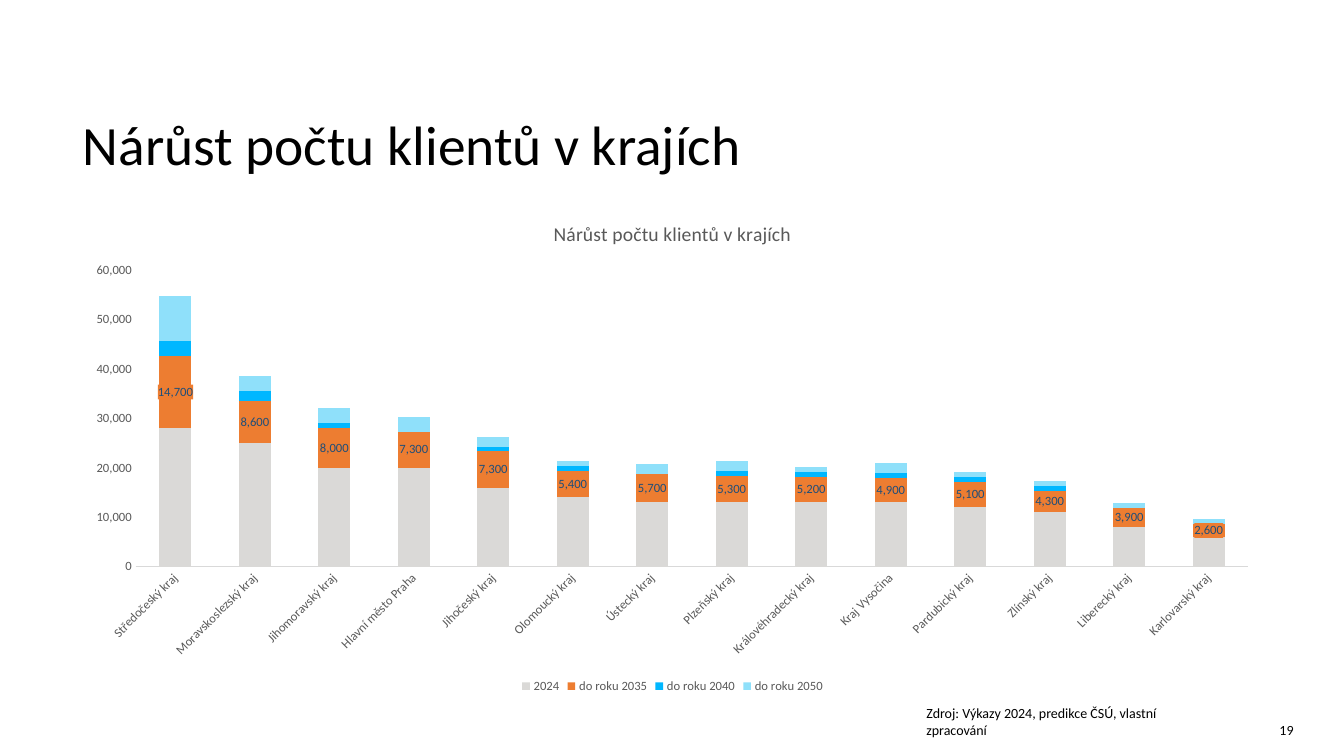
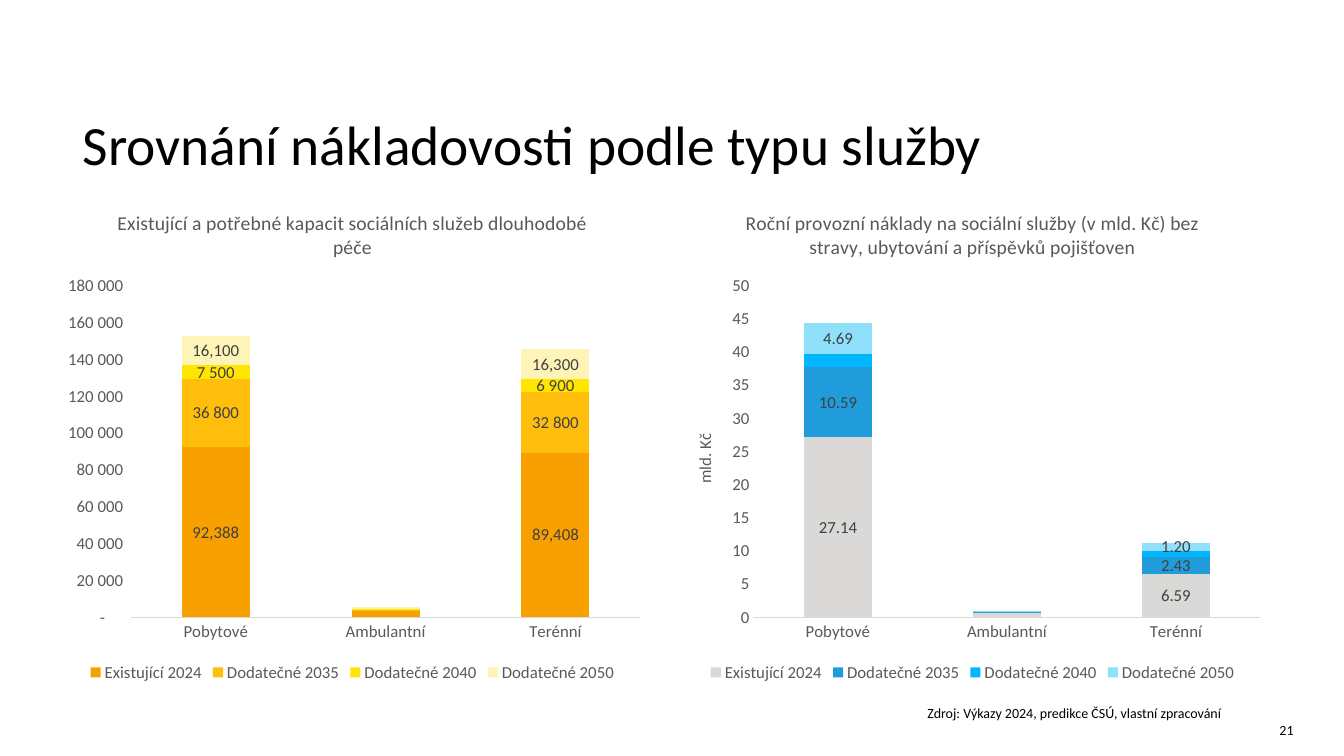
from lxml import etree
from pptx import Presentation
from pptx.chart.data import CategoryChartData
from pptx.dml.color import RGBColor
from pptx.enum.chart import (XL_CHART_TYPE as ChartType, XL_LABEL_POSITION as LabelPos,
                             XL_LEGEND_POSITION as LegendPos, XL_TICK_MARK as Tick)
from pptx.enum.text import MSO_ANCHOR as Anchor, MSO_AUTO_SIZE as AutoSize, PP_ALIGN as Align
from pptx.oxml import parse_xml
from pptx.oxml.ns import nsdecls, qn
from pptx.util import Inches, Pt

FONT = "Calibri"
BLACK, GREY, DARK, LINE = "000000", "595959", "404040", "D9D9D9"
SILVER, ORANGE, BLUE, SKY, ICE = "DAD9D7", "ED7D31", "219CDB", "00B7FF", "8FE0FA"
THOUSANDS, DECIMALS = "#,##0", "0.00"
SPACED = r'_-* #\ ##0_-;\-* #\ ##0_-;_-* "-"??_-;_-'
SOURCE = "Zdroj: Výkazy 2024, predikce ČSÚ, vlastní zpracování"

REGIONS = ["Středočeský kraj", "Moravskoslezský kraj", "Jihomoravský kraj",
           "Hlavní město Praha", "Jihočeský kraj", "Olomoucký kraj", "Ústecký kraj",
           "Plzeňský kraj", "Královéhradecký kraj", "Kraj Vysočina", "Pardubický kraj",
           "Zlínský kraj", "Liberecký kraj", "Karlovarský kraj"]
SERVICES = ["Pobytové", "Ambulantní", "Terénní"]

# Series: name, colour, label format (None = no labels), values
REGION_CHART = dict(
    title="Nárůst počtu klientů v krajích", at=(0.72, 2, 11.9, 4.92), size=9,
    cats=REGIONS, axis_format=THOUSANDS, top=60000, step=10000, cat_angle=-45,
    label_color="1F4E79", label_fill=ORANGE,
    series=[
        ("2024", SILVER, None, [28000, 25000, 20000, 20000, 16000, 14000, 13000,
                                13000, 13000, 13000, 12000, 11000, 8000, 6000]),
        ("do roku 2035", ORANGE, THOUSANDS, [14700, 8600, 8000, 7300, 7300, 5400, 5700,
                                             5300, 5200, 4900, 5100, 4300, 3900, 2600]),
        ("do roku 2040", SKY, None, [3000, 2000, 1000, 0, 1000, 1000, 0,
                                     1000, 1000, 1000, 1000, 1000, 0, 0]),
        ("do roku 2050", ICE, None, [9000, 3000, 3000, 3000, 2000, 1000, 2000,
                                     2000, 1000, 2000, 1000, 1000, 1000, 1000]),
    ])
CAPACITY_CHART = dict(
    title="Existující a potřebné kapacit sociálních služeb dlouhodobé péče",
    at=(0.52, 1.89, 5.95, 4.92), size=12, cats=SERVICES,
    axis_format=SPACED, top=180000, step=20000, unlabelled=1,
    series=[
        ("Existující 2024", "F7A000", THOUSANDS, [92388, 3341, 89408]),
        ("Dodatečné 2035", "FFBE0B", SPACED, [36800, 1100, 32800]),
        ("Dodatečné 2040", "FFE500", SPACED, [7500, 300, 6900]),
        ("Dodatečné 2050", "FFF4B7", THOUSANDS, [16100, 600, 16300]),
    ])
COST_CHART = dict(
    title="Roční provozní náklady na sociální služby (v mld. Kč) bez stravy, "
          "ubytování a příspěvků pojišťoven",
    at=(6.67, 1.89, 5.95, 4.92), size=12, cats=SERVICES,
    axis_format="0", top=50, step=5, unlabelled=1, axis_title="mld. Kč",
    series=[
        ("Existující 2024", SILVER, DECIMALS, [27.14, 0.67, 6.59]),
        ("Dodatečné 2035", BLUE, DECIMALS, [10.59, 0.22, 2.43]),
        ("Dodatečné 2040", SKY, None, [2, 0, 1]),
        ("Dodatečné 2050", ICE, DECIMALS, [4.69, 0.12, 1.2]),
    ])
SLIDES = [
    dict(title="Nárůst počtu klientů v krajích", number="19",
         source_at=(9.09, 6.94, 3.1, 0.44), charts=[REGION_CHART]),
    dict(title="Srovnání nákladovosti podle typu služby", number="21",
         source_at=(9.1, 6.94, 3.67, 0.27), charts=[CAPACITY_CHART, COST_CHART]),
]


def rgb(color):
    return RGBColor.from_string(color)


def box(at):
    return [Inches(v) for v in at]


def set_font(font, size, color):
    font.name, font.size, font.bold = FONT, Pt(size), False
    font.color.rgb = rgb(color)


def add_text(s, text, at, align=Align.LEFT, anchor=Anchor.TOP):
    tf = s.shapes.add_textbox(*box(at)).text_frame
    tf.word_wrap, tf.vertical_anchor = True, anchor
    p = tf.paragraphs[0]
    p.text, p.alignment = text, align
    set_font(p.font, 10, BLACK)


def set_title(s, text):
    sp = s.shapes.title
    sp.left, sp.top, sp.width, sp.height = box((0.72, 1.18, 10.33, 0.57))
    tf = sp.text_frame
    tf.auto_size, tf.vertical_anchor = AutoSize.NONE, Anchor.MIDDLE
    p = tf.paragraphs[0]
    p.text, p.alignment, p.line_spacing = text, Align.LEFT, 0.9
    set_font(p.font, 39.6, BLACK)


def set_chart_text(tf, text, size):
    p = tf.paragraphs[0]
    p.text = text
    set_font(p.font, size, GREY)


def add_labels(series, number_format, spec_chart):
    labels = series.data_labels
    labels.show_value, labels.position = True, LabelPos.CENTER
    labels.number_format, labels.number_format_is_linked = number_format, False
    set_font(labels.font, spec_chart["size"], spec_chart.get("label_color", DARK))
    xml = labels._element
    if "label_fill" in spec_chart:
        fill = parse_xml(f'<c:spPr {nsdecls("c", "a")}><a:solidFill><a:srgbClr '
                         f'val="{spec_chart["label_fill"]}"/></a:solidFill></c:spPr>')
        xml.find(qn("c:txPr")).addprevious(fill)
    if "unlabelled" in spec_chart:
        hidden = etree.Element(qn("c:dLbl"))
        etree.SubElement(hidden, qn("c:idx")).set("val", str(spec_chart["unlabelled"]))
        etree.SubElement(hidden, qn("c:delete")).set("val", "1")
        xml.insert(0, hidden)


def format_axes(chart, info):
    cat, val = chart.category_axis, chart.value_axis
    for axis in (cat, val):
        axis.has_major_gridlines = False
        axis.major_tick_mark = axis.minor_tick_mark = Tick.NONE
        set_font(axis.tick_labels.font, info["size"], GREY)
    cat.format.line.color.rgb, cat.format.line.width = rgb(LINE), Pt(0.75)
    if "cat_angle" in info:
        body = cat._element.find(qn("c:txPr")).find(qn("a:bodyPr"))
        body.set("rot", str(info["cat_angle"] * 60000))
    val.format.line.fill.background()
    val.minimum_scale, val.maximum_scale, val.major_unit = 0, info["top"], info["step"]
    val.tick_labels.number_format = info["axis_format"]
    val.tick_labels.number_format_is_linked = False
    if "axis_title" in info:
        tf = val.axis_title.text_frame
        set_chart_text(tf, info["axis_title"], info["size"])
        tf._txBody.find(qn("a:bodyPr")).set("rot", "-5400000")


def add_stacked_chart(s, info):
    data = CategoryChartData()
    data.categories = info["cats"]
    for name, _, _, values in info["series"]:
        data.add_series(name, values)
    chart = s.shapes.add_chart(ChartType.COLUMN_STACKED, *box(info["at"]), data).chart
    set_font(chart.font, info["size"], GREY)
    chart.has_title = True
    set_chart_text(chart.chart_title.text_frame, info["title"], 14)
    chart.has_legend = True
    chart.legend.position, chart.legend.include_in_layout = LegendPos.BOTTOM, False
    set_font(chart.legend.font, info["size"], GREY)
    format_axes(chart, info)

    plot = chart.plots[0]
    plot.gap_width, plot.overlap, plot.vary_by_categories = 150, 100, False
    for series, (_, color, number_format, _) in zip(plot.series, info["series"]):
        series.format.fill.solid()
        series.format.fill.fore_color.rgb = rgb(color)
        if number_format:
            add_labels(series, number_format, info)


def main():
    prs = Presentation()
    prs.slide_width, prs.slide_height = Inches(13.33), Inches(7.5)
    title_only = prs.slide_layouts[5]
    for content in SLIDES:
        s = prs.slides.add_slide(title_only)
        set_title(s, content["title"])
        for info in content["charts"]:
            add_stacked_chart(s, info)
        add_text(s, SOURCE, content["source_at"])
        add_text(s, content["number"], (12.19, 7.08, 1.14, 0.32), Align.CENTER, Anchor.MIDDLE)
    prs.save("out.pptx")


if __name__ == "__main__":
    main()
